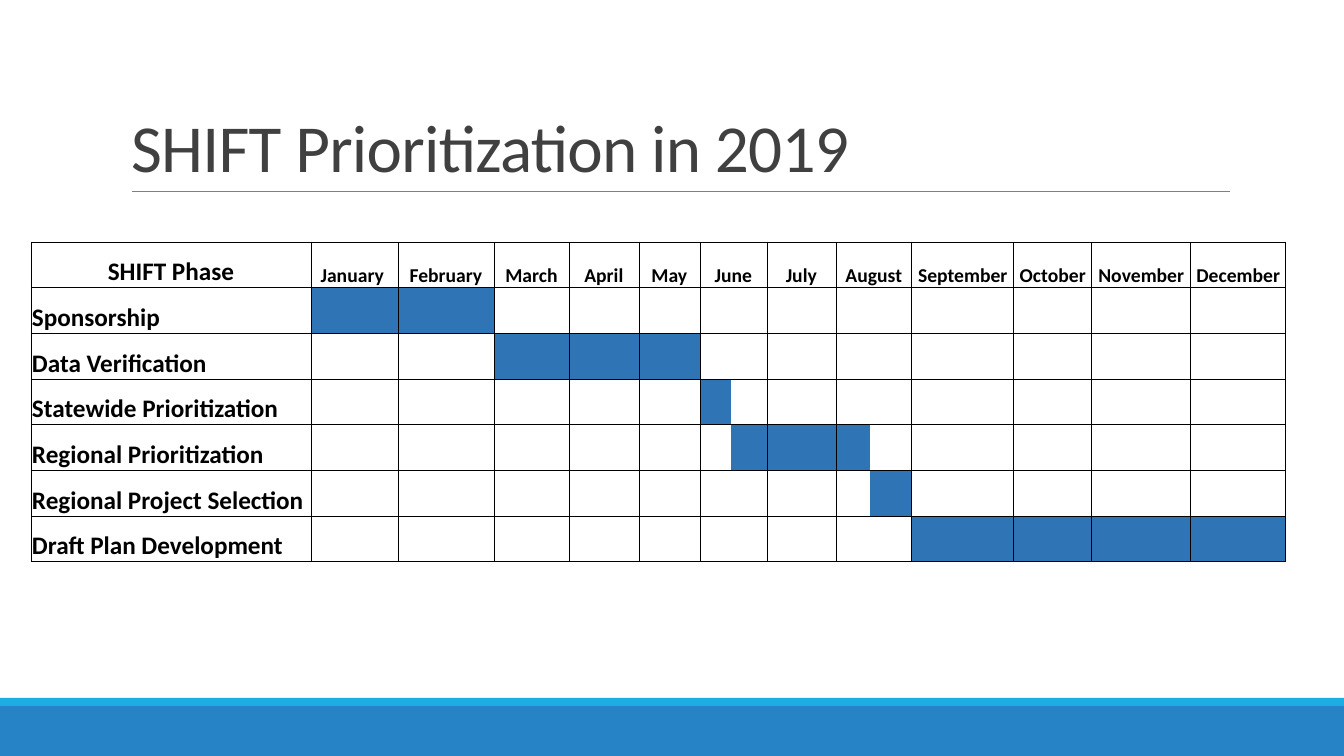
import pptx
import pptx.util
import pptx.dml.color
import pptx.enum.shapes
import pptx.enum.text
import pptx.oxml
import pptx.oxml.ns
import lxml.etree

RGB = pptx.dml.color.RGBColor
BLACK = RGB(0x00, 0x00, 0x00)
INK = RGB(0x40, 0x40, 0x40)
GRAY = RGB(0x80, 0x80, 0x80)
BAR = RGB(0x2F, 0x75, 0xB5)
BLUE = RGB(0x26, 0x83, 0xC6)
CYAN = RGB(0x1C, 0xAD, 0xE4)
PX = 914400 / 100.8
LEFT = pptx.enum.text.PP_ALIGN.LEFT
MID = pptx.enum.text.PP_ALIGN.CENTER
BOTTOM = pptx.enum.text.MSO_ANCHOR.BOTTOM
qn = pptx.oxml.ns.qn


def px(*nums):
    return [round(n * PX) for n in nums]


def write(frame, text, size=18, color=BLACK, bold=False, align=LEFT, space=None):
    para = frame.paragraphs[0]
    para.alignment = align
    para.line_spacing = space
    run = para.add_run()
    run.text = text
    font = run.font
    font.name = "Calibri"
    font.size = pptx.util.Pt(size)
    font.bold = bold
    font.color.rgb = color
    return run


deck = pptx.Presentation()
deck.slide_width, deck.slide_height = px(1344, 756)
slide = deck.slides.add_slide(deck.slide_layouts[5])
shapes = slide.shapes

# Footer bands and title rule
for top, high, color in [(706, 50, BLUE), (698, 8, CYAN)]:
    band = shapes.add_shape(
        pptx.enum.shapes.MSO_SHAPE.RECTANGLE, *px(0, top, 1344, high))
    band.shadow.inherit = False
    band.fill.solid()
    band.fill.fore_color.rgb = color
    band.line.fill.background()

rule = shapes.add_connector(
    pptx.enum.shapes.MSO_CONNECTOR.STRAIGHT, *px(132, 191, 1230, 191))
rule.line.color.rgb = GRAY
rule.line.width = pptx.util.Pt(0.5)
lxml.etree.SubElement(rule._element.spPr, qn("a:effectLst"))

title = shapes.title
title.left, title.top, title.width, title.height = px(121, 31, 1109, 160)
frame = title.text_frame
frame.word_wrap = True
frame.auto_size = pptx.enum.text.MSO_AUTO_SIZE.NONE
frame.vertical_anchor = BOTTOM
run = write(frame, "SHIFT Prioritization in 2019", size=48, color=INK, space=0.85)
run.font._element.set("spc", "-50")

# Schedule: June and August are each split into two columns
WIDTHS = [280, 87, 96, 75, 70, 61, 31, 36, 69, 34, 42, 102, 78, 99, 95]
HALVES = [6, 9]
MONTHS = {1: "January ", 2: "February", 3: "March", 4: "April", 5: "May",
          6: "June", 8: "July", 9: "August", 11: "September",
          12: "October", 13: "November", 14: "December"}
PHASES = [  # name, first and last filled column
    ("Sponsorship", 1, 2),
    ("Data Verification", 3, 5),
    ("Statewide Prioritization", 6, 6),
    ("Regional Prioritization", 7, 9),
    ("Regional Project Selection", 10, 10),
    ("Draft Plan Development", 11, 14),
]
rows = len(PHASES) + 1
table = shapes.add_table(
    rows, len(WIDTHS), *px(31, 242, sum(WIDTHS), 320)).table
table.first_row = False
table.horz_banding = False
for col, wide in zip(table.columns, px(*WIDTHS)):
    col.width = wide
for row in table.rows:
    row.height = round(320 * PX / rows)

for r in range(rows):
    for c in range(len(WIDTHS)):
        cell = table.cell(r, c)
        cell.vertical_anchor = BOTTOM
        cell.margin_left, cell.margin_top, cell.margin_right = px(1, 1, 1)
        cell.margin_bottom = 0
        props = cell._tc.get_or_add_tcPr()
        for side in "LRTB":
            edge = lxml.etree.SubElement(props, qn("a:ln" + side), w="6350")
            inner = r > 0 and (side == "R" and c in HALVES
                               or side == "L" and c - 1 in HALVES)
            if inner:
                lxml.etree.SubElement(edge, qn("a:noFill"))
            else:
                fill = lxml.etree.SubElement(edge, qn("a:solidFill"))
                lxml.etree.SubElement(fill, qn("a:srgbClr"), val=str(BLACK))
        if r and PHASES[r - 1][1] <= c <= PHASES[r - 1][2]:
            cell.fill.solid()
            cell.fill.fore_color.rgb = BAR
        else:
            cell.fill.background()

for c in HALVES:
    table.cell(0, c).merge(table.cell(0, c + 1))
write(table.cell(0, 0).text_frame, "SHIFT Phase", bold=True, align=MID)
for c, month in MONTHS.items():
    write(table.cell(0, c).text_frame, month, size=14, bold=True, align=MID)
for r, phase in enumerate(PHASES, 1):
    write(table.cell(r, 0).text_frame, phase[0], bold=True)

deck.save("out.pptx")
